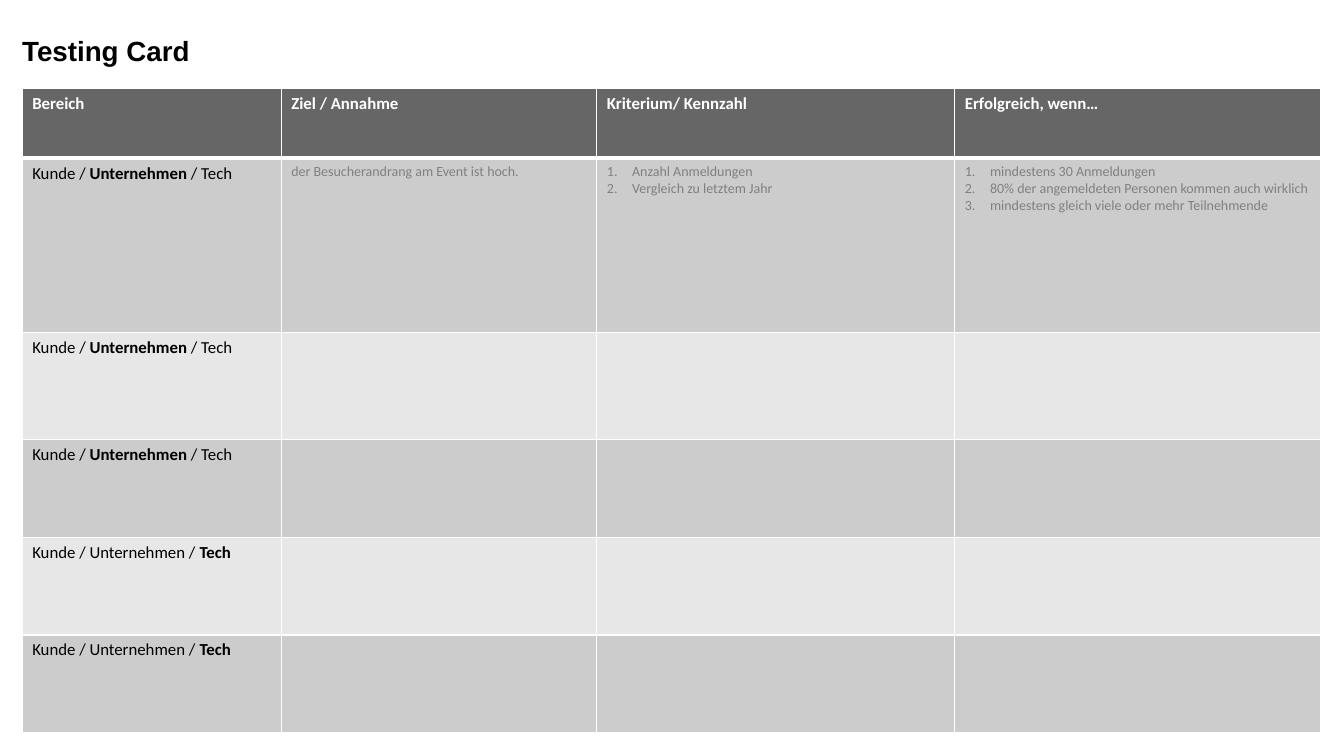
from lxml.etree import SubElement
from pptx import Presentation
from pptx.dml.color import RGBColor
from pptx.enum.text import MSO_ANCHOR, PP_ALIGN
from pptx.oxml.ns import qn
from pptx.util import Pt

SCALE = 9144
WHITE, BLACK, GREY = "FFFFFF", "000000", "808080"
HEAD, DARK, LIGHT = "666666", "CCCCCC", "E7E7E7"
COLS = [257, 313, 355, 363]
ROWS = [69, 173, 106, 97, 97, 97]
HEADS = ["Bereich", "Ziel / Annahme", "Kriterium/ Kennzahl", "Erfolgreich, wenn…"]
AREAS = ["Kunde", "Unternehmen", "Tech"]
FOCUS = ["Unternehmen"] * 3 + ["Tech"] * 2
GOAL = "der Besucherandrang am Event ist hoch."
METRICS = ["Anzahl Anmeldungen", "Vergleich zu letztem Jahr"]
TARGETS = [
    "mindestens 30 Anmeldungen",
    "80% der angemeldeten Personen kommen auch wirklich",
    "mindestens gleich viele oder mehr Teilnehmende",
]


def px(size):
    return size * SCALE


def paint(code):
    return RGBColor.from_string(code)


def add_run(para, text, size, color, bold=False, font="Calibri"):
    run = para.add_run()
    run.text = text
    run.font.name = font
    run.font.size = Pt(size)
    run.font.bold = bold
    run.font.color.rgb = paint(color)


def add_title(slide, text):
    title = slide.shapes.title
    title.left, title.top, title.width, title.height = map(px, (22, 35, 1285, 35))
    frame = title.text_frame
    frame.word_wrap = True
    frame.vertical_anchor = MSO_ANCHOR.MIDDLE
    frame.margin_left = 0
    frame.margin_right = px(10)
    frame.margin_top = frame.margin_bottom = px(5)
    para = frame.paragraphs[0]
    para.alignment = PP_ALIGN.LEFT
    para.line_spacing = 0.9
    add_run(para, text, 19.8, BLACK, True, "Arial")


def add_edge(cell, spot, side, width):
    props = cell._tc.get_or_add_tcPr()
    line = SubElement(props, qn(f"a:ln{side}"), w=str(Pt(width)))
    fill = SubElement(line, qn("a:solidFill"))
    SubElement(fill, qn("a:srgbClr"), val=WHITE)
    props.insert(spot, line)


def style_cell(cell, row):
    cell.fill.solid()
    cell.fill.fore_color.rgb = paint(HEAD if row == 0 else DARK if row % 2 else LIGHT)
    thick = {0: "B", 1: "T"}.get(row)
    for spot, side in enumerate("LRTB"):
        add_edge(cell, spot, side, 3 if side == thick else 1)


def add_list(cell, items):
    frame = cell.text_frame
    for index, item in enumerate(items):
        para = frame.add_paragraph() if index else frame.paragraphs[0]
        props = para._p.get_or_add_pPr()
        props.set("marL", str(px(25)))
        props.set("indent", str(px(-25)))
        SubElement(props, qn("a:buFont"), typeface="+mj-lt")
        SubElement(props, qn("a:buAutoNum"), type="arabicPeriod")
        add_run(para, item, 10, GREY)


def add_area(cell, focus):
    para = cell.text_frame.paragraphs[0]
    before, after = " / ".join(AREAS).split(focus)
    for text, bold in ((before, False), (focus, True), (after, False)):
        if text:
            add_run(para, text, 12, BLACK, bold)


def add_grid(slide):
    box = map(px, (22, 88, sum(COLS), sum(ROWS)))
    table = slide.shapes.add_table(len(ROWS), len(COLS), *box).table
    for col, width in zip(table.columns, COLS):
        col.width = px(width)
    for index, height in enumerate(ROWS):
        table.rows[index].height = px(height)
        for cell in table.rows[index].cells:
            style_cell(cell, index)
    return table


def main():
    deck = Presentation()
    deck.slide_width, deck.slide_height = px(1333), px(750)
    slide = deck.slides.add_slide(deck.slide_layouts[5])
    add_title(slide, "Testing Card")
    table = add_grid(slide)
    for index, text in enumerate(HEADS):
        add_run(table.cell(0, index).text_frame.paragraphs[0], text, 12, WHITE, True)
    for index, focus in enumerate(FOCUS, 1):
        add_area(table.cell(index, 0), focus)
    add_run(table.cell(1, 1).text_frame.paragraphs[0], GOAL, 10, GREY)
    add_list(table.cell(1, 2), METRICS)
    add_list(table.cell(1, 3), TARGETS)
    deck.save("out.pptx")


if __name__ == "__main__":
    main()
